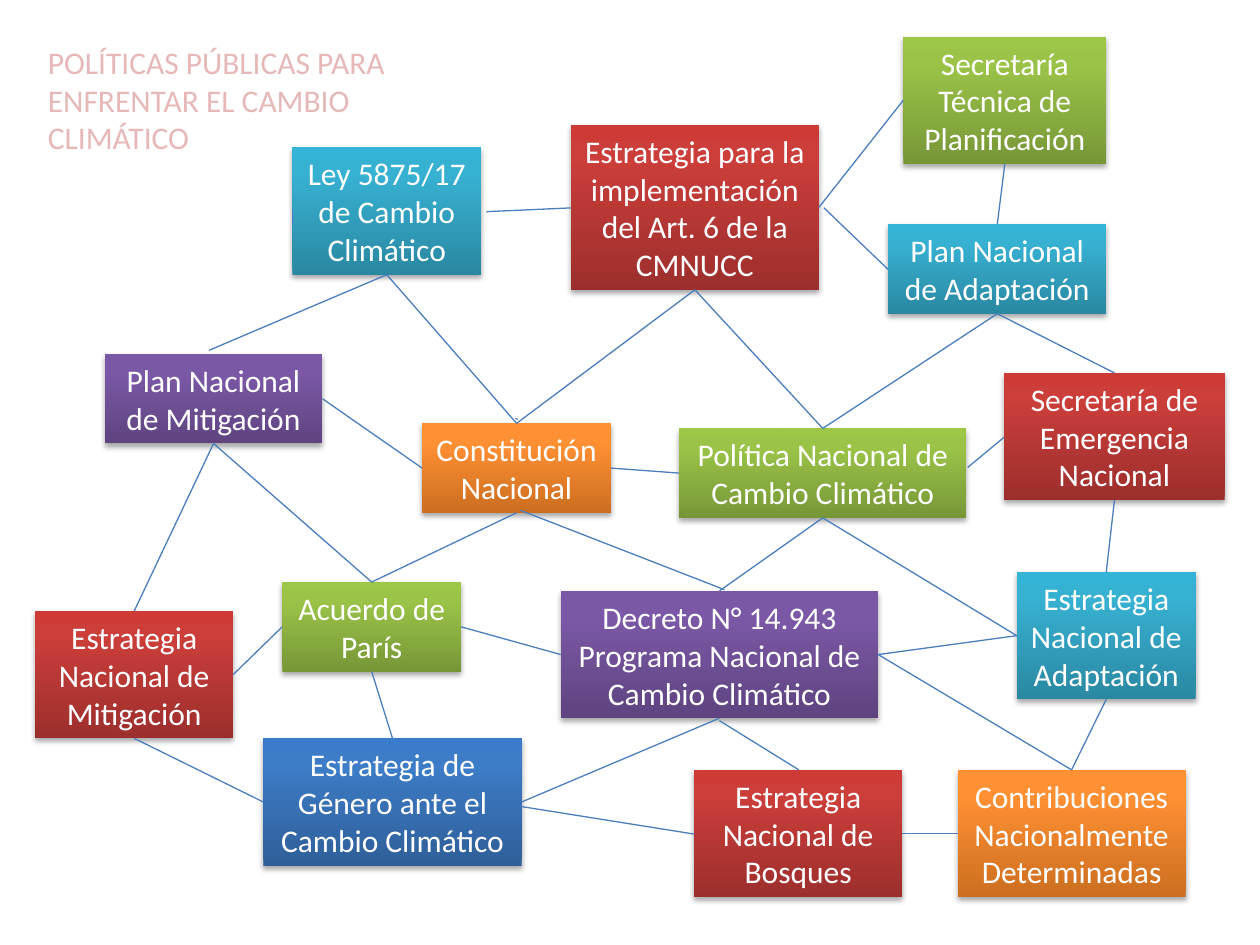
from copy import deepcopy

from pptx import Presentation
from pptx import util as u
from pptx.dml.color import RGBColor
from pptx.enum import shapes, text
from pptx.oxml import parse_xml
from pptx.oxml.ns import nsdecls, qn

PX = u.Inches(1) // 100
PAGE = (1000, 750)
FONT = "Calibri"
COLORS = {"white": "FFFFFF", "title": "E6B9B8", "line": "4B7EBC"}
GRADIENTS = {
    "orange": ("CC6E20", "FF9034", "FF9136"),
    "teal": ("2A88A2", "37B1D2", "34B4D6"),
    "purple": ("5F4480", "7B58A6", "7C57A8"),
    "red": ("9C2F2D", "CB3E3A", "CE3B37"),
    "blue": ("2F5F99", "3D7CC7", "3A7CCB"),
    "green": ("779737", "9BC348", "9DC746"),
}
STOPS = (0, 0.8, 1)
TOP, LEFT, BOTTOM, RIGHT = range(4)

TITLE = "POLÍTICAS PÚBLICAS PARA ENFRENTAR EL CAMBIO CLIMÁTICO"
TITLE_BOX = (28, 29, 358, 101)
POLICIES = {
    "constitution": ("Constitución Nacional", "orange", (335, 336, 150, 71)),
    "law": ("Ley 5875/17 de Cambio Climático", "teal", (232, 117, 150, 101)),
    "mitigation_plan": ("Plan Nacional de Mitigación", "purple", (83, 281, 173, 71)),
    "mitigation": ("Estrategia Nacional de Mitigación", "red", (28, 485, 157, 101)),
    "gender": ("Estrategia de Género ante el Cambio Climático", "blue", (209, 586, 205, 101)),
    "article_6": ("Estrategia para la implementación del Art. 6 de la CMNUCC", "red",
                  (453, 99, 197, 131)),
    "adaptation_plan": ("Plan Nacional de Adaptación", "teal", (705, 178, 173, 71)),
    "climate_policy": ("Política Nacional de Cambio Climático", "green", (539, 340, 228, 71)),
    "adaptation": ("Estrategia Nacional de Adaptación", "teal", (807, 454, 142, 101)),
    "decree": ("Decreto N° 14.943 Programa Nacional de Cambio Climático", "purple",
               (445, 469, 252, 101)),
    "planning": ("Secretaría Técnica de Planificación", "green", (717, 29, 161, 101)),
    "emergency": ("Secretaría de Emergencia Nacional", "red", (797, 296, 175, 101)),
    "paris": ("Acuerdo de París", "green", (224, 462, 142, 71)),
    "forests": ("Estrategia Nacional de Bosques", "red", (551, 611, 165, 101)),
    "contributions": ("Contribuciones Nacionalmente Determinadas", "orange",
                      (760, 611, 181, 101)),
}
LINKS = [
    ("law", BOTTOM, "constitution", TOP),
    ("constitution", TOP, "article_6", BOTTOM),
    ("constitution", RIGHT, "climate_policy", LEFT),
    ("mitigation_plan", RIGHT, "constitution", LEFT),
    ("constitution", BOTTOM, "paris", TOP),
    ("decree", TOP, "climate_policy", BOTTOM),
    ("article_6", BOTTOM, "climate_policy", TOP),
    ("paris", TOP, "mitigation_plan", BOTTOM),
    ("mitigation_plan", BOTTOM, "mitigation", TOP),
    ("paris", LEFT, "mitigation", RIGHT),
    ("paris", BOTTOM, "gender", TOP),
    ("mitigation", BOTTOM, "gender", LEFT),
    ("forests", RIGHT, "contributions", LEFT),
    ("contributions", TOP, "adaptation", BOTTOM),
    ("emergency", BOTTOM, "adaptation", TOP),
    ("adaptation_plan", BOTTOM, "emergency", TOP),
    ("adaptation_plan", TOP, "planning", BOTTOM),
    ("planning", LEFT, "article_6", RIGHT),
    ("decree", RIGHT, "adaptation", LEFT),
    ("gender", RIGHT, "decree", BOTTOM),
    ("climate_policy", BOTTOM, "adaptation", LEFT),
    ("adaptation_plan", BOTTOM, "climate_policy", TOP),
    ("paris", RIGHT, "decree", LEFT),
    ("decree", RIGHT, "contributions", TOP),
]
LOOSE_LINES = [
    (232, 167, 232, 178),
    (386, 168, 453, 165),
    (166, 278, 307, 218),
    (409, 332, 411, 333),
    (413, 405, 575, 468),
    (413, 640, 551, 662),
    (654, 165, 705, 214),
    (768, 371, 797, 347),
    (571, 572, 634, 611),
]


def rgb(name):
    return RGBColor.from_string(COLORS.get(name, name))


def px(values):
    return [value * PX for value in values]


def write(frame, words, color, align):
    frame.word_wrap = True
    frame.text = words
    para = frame.paragraphs[0]
    para.alignment = align
    para.font.name = FONT
    para.font.size = u.Pt(18)
    para.font.color.rgb = rgb(color)


def draw_title(page, box):
    title = page.shapes.title
    title.left, title.top, title.width, title.height = px(box)
    write(title.text_frame, TITLE, "title", text.PP_ALIGN.LEFT)
    title.text_frame.auto_size = text.MSO_AUTO_SIZE.NONE
    title.text_frame.vertical_anchor = text.MSO_ANCHOR.TOP


def fill_gradient(shape, colors):
    shape.fill.gradient()
    shape.fill.gradient_angle = 90
    stop_list = shape._element.spPr.find(".//" + qn("a:gsLst"))
    stop_list.insert(1, deepcopy(stop_list[0]))
    for stop, position, color in zip(shape.fill.gradient_stops, STOPS, colors):
        stop.position = position
        stop.color.rgb = rgb(color)


def add_shadow(shape):
    shape.shadow.inherit = False
    shape._element.spPr.find(qn("a:effectLst")).append(parse_xml(
        f'<a:outerShdw {nsdecls("a")} blurRad="40000" dist="23000" dir="5400000" '
        'rotWithShape="0"><a:srgbClr val="000000"><a:alpha val="35000"/></a:srgbClr>'
        '</a:outerShdw>'))


def draw_policy(page, words, hue, box):
    shape = page.shapes.add_shape(shapes.MSO_SHAPE.RECTANGLE, *px(box))
    shape.line.fill.background()
    fill_gradient(shape, GRADIENTS[hue])
    add_shadow(shape)
    write(shape.text_frame, words, "white", text.PP_ALIGN.CENTER)
    shape.text_frame.auto_size = text.MSO_AUTO_SIZE.SHAPE_TO_FIT_TEXT
    return shape


def draw_line(page, ends=(0, 0, 0, 0)):
    line = page.shapes.add_connector(shapes.MSO_CONNECTOR.STRAIGHT, *px(ends))
    line.line.color.rgb = rgb("line")
    line.line.width = u.Pt(0.75)
    line._element.spPr.append(parse_xml(f'<a:effectLst {nsdecls("a")}/>'))
    return line


def draw_network(page):
    boxes = {name: draw_policy(page, *policy) for name, policy in POLICIES.items()}
    for start, start_side, end, end_side in LINKS:
        line = draw_line(page)
        line.begin_connect(boxes[start], start_side)
        line.end_connect(boxes[end], end_side)
    for ends in LOOSE_LINES:
        draw_line(page, ends)


def main():
    deck = Presentation()
    deck.slide_width, deck.slide_height = px(PAGE)
    page = deck.slides.add_slide(deck.slide_layouts[5])
    draw_title(page, TITLE_BOX)
    draw_network(page)
    deck.save("out.pptx")


if __name__ == "__main__":
    main()
